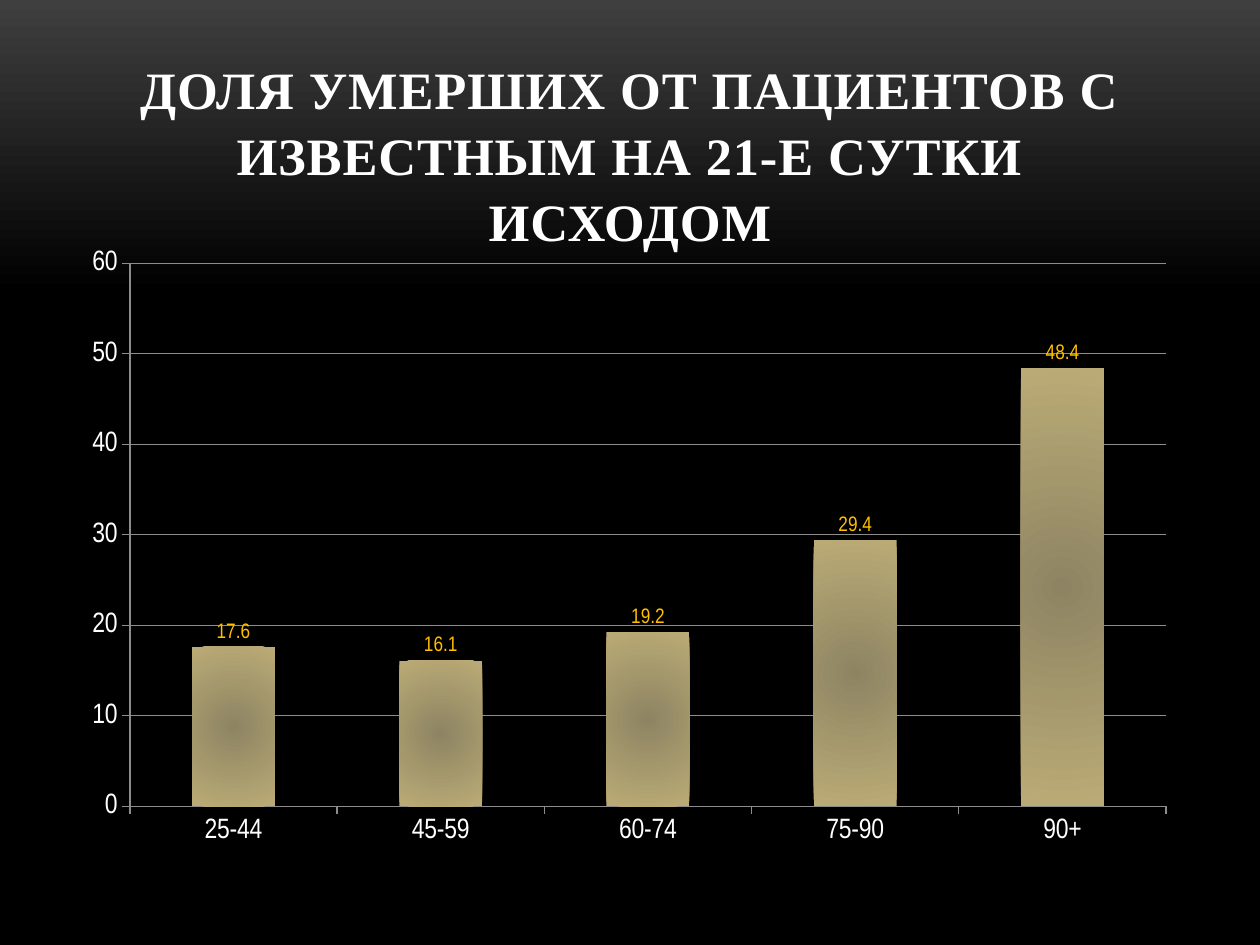
from lxml.etree import SubElement
from pptx import Presentation
from pptx.chart.data import CategoryChartData
from pptx.dml.color import RGBColor
from pptx.enum.chart import XL_CHART_TYPE, XL_LABEL_POSITION, XL_TICK_MARK
from pptx.enum.text import MSO_ANCHOR, MSO_AUTO_SIZE, PP_ALIGN
from pptx.oxml import parse_xml
from pptx.oxml.ns import nsdecls, qn
from pptx.util import Pt

COLORS = {
    "top": "3F3F3F",
    "black": "000000",
    "white": "FFFFFF",
    "label": "FFC000",
    "line": "8C8C8C",
    "bar_center": "8E8463",
    "bar_edge": "BAAB76",
}
TITLE_FONT = "Times New Roman"
CHART_FONT = "Arial Narrow"
AGE_GROUPS = ["25-44", "45-59", "60-74", "75-90", "90+"]
DEATH_SHARES = [17.6, 16.1, 19.2, 29.4, 48.4]
PLOT_AREA = {"x": 0.042, "y": 0.032, "w": 0.949, "h": 0.896}


def px(length):
    return round(length * 914400 / 126)


def rgb(name):
    return RGBColor.from_string(COLORS[name])


def format_font(font, size, color, name=CHART_FONT, bold=False):
    font.size = Pt(size)
    font.name = name
    font.bold = bold
    font.color.rgb = rgb(color)


def write_text(frame, text, *, size, color, font, bold=False, align=PP_ALIGN.LEFT,
               spacing=0, line_spacing=1.0):
    paragraph = frame.paragraphs[0]
    paragraph.alignment = align
    paragraph.line_spacing = line_spacing
    run = paragraph.add_run()
    run.text = text
    format_font(run.font, size, color, font, bold)
    run.font._element.set("spc", str(round(spacing * 100)))


def set_background(slide):
    fill = slide.background.fill
    fill.gradient()
    fill.gradient_angle = 270
    for stop, position, color in zip(fill.gradient_stops, (0, 0.31), ("top", "black")):
        stop.position = position
        stop.color.rgb = rgb(color)


def set_title(slide, text):
    title = slide.shapes.title
    title.left, title.top, title.width, title.height = map(px, (84, 38, 1092, 217))
    frame = title.text_frame
    frame.word_wrap = True
    frame.auto_size = MSO_AUTO_SIZE.NONE
    frame.vertical_anchor = MSO_ANCHOR.BOTTOM
    frame.margin_bottom = px(3)
    write_text(frame, text, size=30, color="white", font=TITLE_FONT, bold=True,
               align=PP_ALIGN.CENTER, spacing=0.5, line_spacing=1.05)


def format_axis(axis):
    axis.major_tick_mark = XL_TICK_MARK.OUTSIDE
    axis.minor_tick_mark = XL_TICK_MARK.NONE
    format_font(axis.tick_labels.font, 16, "white")
    axis.format.line.color.rgb = rgb("line")
    axis.format.line.width = Pt(0.75)


def set_radial_fill(series):
    series.format.fill.solid()
    properties = series.format.fill._xPr
    solid = properties.find(qn("a:solidFill"))
    stops = "".join(
        f'<a:gs pos="{position}"><a:srgbClr val="{COLORS[color]}"/></a:gs>'
        for position, color in ((0, "bar_center"), (100000, "bar_edge")))
    properties.replace(solid, parse_xml(
        f'<a:gradFill {nsdecls("a")} rotWithShape="1"><a:gsLst>{stops}</a:gsLst>'
        '<a:path path="circle"><a:fillToRect l="50000" t="50000" r="50000" b="50000"/>'
        '</a:path></a:gradFill>'))


def set_plot_layout(chart):
    plot_area = chart._chartSpace.chart.plotArea
    layout = plot_area.find(qn("c:layout"))
    if layout is None:
        layout = SubElement(plot_area, qn("c:layout"))
        plot_area.insert(0, layout)
    manual = SubElement(layout, qn("c:manualLayout"))
    settings = {"layoutTarget": "inner", "xMode": "edge", "yMode": "edge", **PLOT_AREA}
    for tag, value in settings.items():
        SubElement(manual, qn(f"c:{tag}")).set("val", str(value))


def add_column_chart(slide):
    data = CategoryChartData()
    data.categories = AGE_GROUPS
    data.add_series("Series 1", DEATH_SHARES)
    chart = slide.shapes.add_chart(
        XL_CHART_TYPE.COLUMN_CLUSTERED, *map(px, (84, 244, 1092, 606)), data).chart
    chart.has_title = False
    chart.has_legend = False
    format_font(chart.font, 10, "white")
    set_plot_layout(chart)

    # Axes
    format_axis(chart.category_axis)
    value_axis = chart.value_axis
    format_axis(value_axis)
    value_axis.minimum_scale, value_axis.maximum_scale = 0, 60
    value_axis.major_unit = 10
    value_axis.has_major_gridlines = True
    value_axis.major_gridlines.format.line.color.rgb = rgb("line")
    value_axis.major_gridlines.format.line.width = Pt(0.75)

    # Columns and their values
    plot = chart.plots[0]
    plot.gap_width = 150
    plot.vary_by_categories = False
    series = plot.series[0]
    set_radial_fill(series)
    labels = series.data_labels
    labels.show_value = True
    labels.position = XL_LABEL_POSITION.OUTSIDE_END
    format_font(labels.font, 12, "label")


def main():
    presentation = Presentation()
    presentation.slide_width, presentation.slide_height = px(1260), px(945)
    slide = presentation.slides.add_slide(presentation.slide_layouts[5])
    set_background(slide)
    set_title(slide, "ДОЛЯ УМЕРШИХ ОТ ПАЦИЕНТОВ С ИЗВЕСТНЫМ НА 21-Е СУТКИ ИСХОДОМ")
    add_column_chart(slide)
    presentation.save("out.pptx")


if __name__ == "__main__":
    main()
